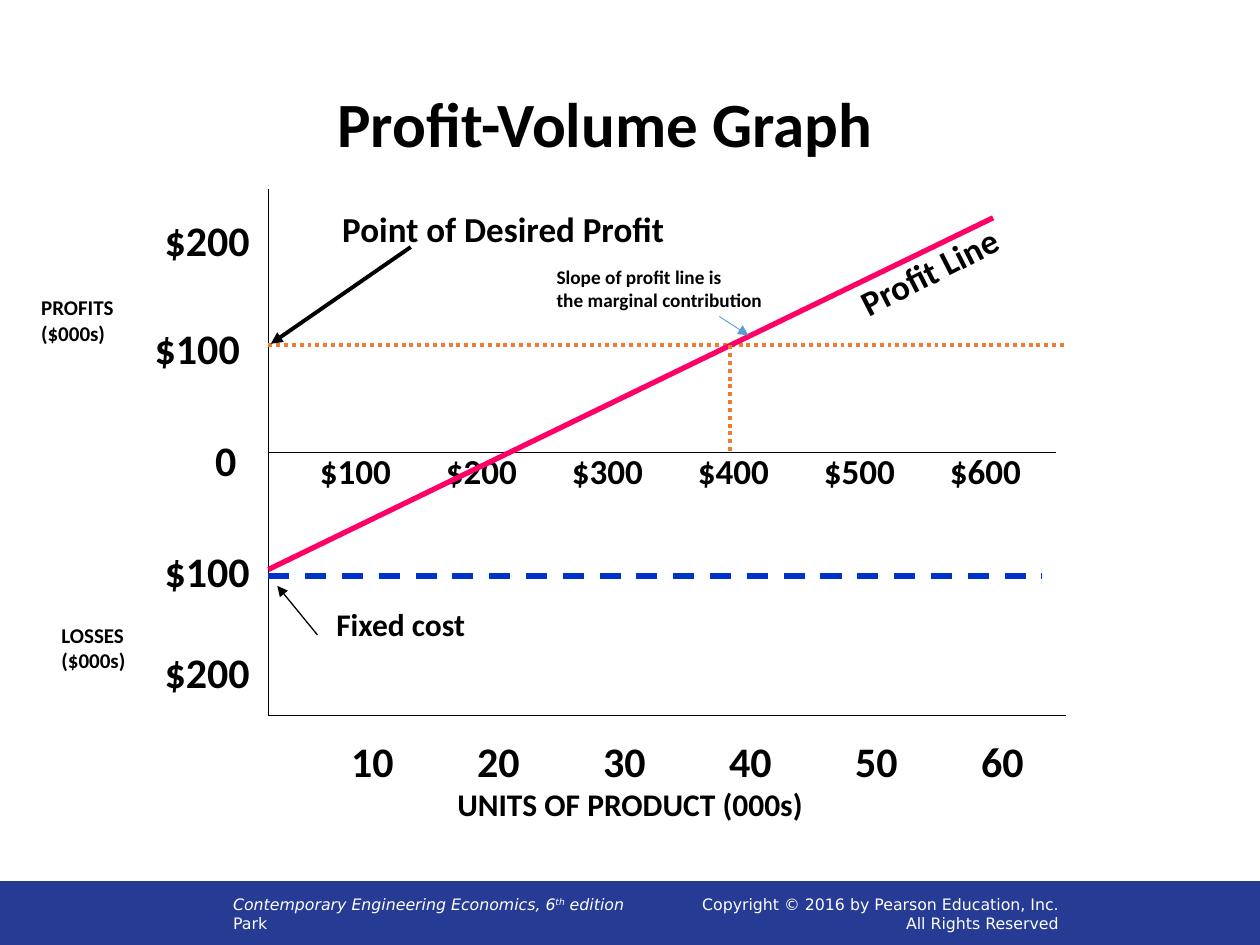
import pptx
import pptx.dml.color
import pptx.enum.dml
import pptx.enum.shapes
import pptx.enum.text
import pptx.oxml.ns
import pptx.util
from lxml import etree

Cm, Pt = pptx.util.Cm, pptx.util.Pt
RGBColor = pptx.dml.color.RGBColor
Align = pptx.enum.text.PP_ALIGN
Anchor = pptx.enum.text.MSO_ANCHOR
AutoSize = pptx.enum.text.MSO_AUTO_SIZE
Dash = pptx.enum.dml.MSO_LINE
qn = pptx.oxml.ns.qn

BLACK = RGBColor(0x00, 0x00, 0x00)
WHITE = RGBColor(0xFF, 0xFF, 0xFF)
NAVY = RGBColor(0x26, 0x3B, 0x94)
ORANGE = RGBColor(0xED, 0x7D, 0x31)
PINK = RGBColor(0xFF, 0x00, 0x66)
BLUE = RGBColor(0x00, 0x33, 0xCC)
SKY = RGBColor(0x5B, 0x9B, 0xD5)

# Graph positions in cm
AXIS_X, RIGHT = 5.41, 21.49
TOP, BOTTOM = 3.81, 14.43
DESIRED_Y, ZERO_Y, FIXED_Y = 6.96, 9.12, 11.61
BREAK_EVEN_X = 14.71


class Painter:
    """Holds the text style and the slide being built."""

    label_style = {"name": "Calibri", "bold": True, "color": BLACK}
    footer_style = {"name": "DejaVu Sans", "size": Pt(9), "color": WHITE}

    def __init__(self, slide):
        self.slide = slide

    def style_span(self, span, style):
        for key, value in style.items():
            if key == "color":
                span.font.color.rgb = value
            elif key == "baseline":
                span.font._element.set("baseline", value)
            else:
                setattr(span.font, key, value)

    def text(self, place, lines, style, frame_format, para_format=None):
        """Each line is a string or a list of (string, extra style) spans."""
        box = self.slide.shapes.add_textbox(*map(Cm, place))
        frame = box.text_frame
        for key, value in frame_format.items():
            setattr(frame, key, value)
        for index, line in enumerate(lines):
            para = frame.paragraphs[0] if index == 0 else frame.add_paragraph()
            for key, value in (para_format or {}).items():
                if key != "space_before" or index:
                    setattr(para, key, value)
            for words, extra in [(line, {})] if isinstance(line, str) else line:
                span = para.add_run()
                span.text = words
                self.style_span(span, {**style, **extra})
        return box

    def label(self, place, lines, size, wrap=False, para_format=None):
        frame_format = {"word_wrap": wrap, "auto_size": AutoSize.SHAPE_TO_FIT_TEXT}
        style = {**self.label_style, "size": Pt(size)}
        return self.text(place, lines, style, frame_format, para_format)

    def scale(self, place, values, size, step=2.54):
        """A row of values set apart by evenly spaced tab stops."""
        box = self.label(place, ["\t".join(values)], size)
        properties = box.text_frame.paragraphs[0]._p.get_or_add_pPr()
        stops = etree.SubElement(properties, qn("a:tabLst"))
        for number in range(1, len(values)):
            etree.SubElement(stops, qn("a:tab"), pos=str(Cm(step * number)), algn="l")

    def block(self, place, lines, style, para_format=None):
        frame_format = {"word_wrap": True, "vertical_anchor": Anchor.MIDDLE}
        return self.text(place, lines, style, frame_format, para_format)

    def bar(self, place, color):
        kind = pptx.enum.shapes.MSO_SHAPE.RECTANGLE
        shape = self.slide.shapes.add_shape(kind, *map(Cm, place))
        shape.shadow.inherit = False
        shape.fill.solid()
        shape.fill.fore_color.rgb = color
        shape.line.color.rgb = color
        shape.line.width = Pt(0.75)

    def line(self, start, end, color=BLACK, width=0.75, dash=None, arrow=False):
        kind = pptx.enum.shapes.MSO_CONNECTOR.STRAIGHT
        line = self.slide.shapes.add_connector(kind, *map(Cm, start + end))
        line.line.color.rgb = color
        line.line.width = Pt(width)
        if dash:
            line.line.dash_style = dash
        if arrow:
            outline = line.line._get_or_add_ln()
            etree.SubElement(outline, qn("a:tailEnd"), type="triangle")
        etree.SubElement(line._element.spPr, qn("a:effectLst"))


def main():
    deck = pptx.Presentation()
    deck.slide_width, deck.slide_height = Cm(25.4), Cm(19.05)
    page = Painter(deck.slides.add_slide(deck.slide_layouts[6]))

    # Footer
    page.bar((0, 17.78, 25.43, 1.27), NAVY)
    book = [
        ("Contemporary Engineering Economics, 6", {"italic": True}),
        ("th", {"italic": True, "baseline": "30000"}),
        (" edition", {"italic": True}),
    ]
    page.block((4.45, 17.78, 15.65, 1.27), [book, "Park"], page.footer_style)
    rights = ["Copyright © 2016 by Pearson Education, Inc.", "All Rights Reserved"]
    page.block((12.5, 17.78, 9.09, 1.27), rights, page.footer_style,
               {"alignment": Align.RIGHT})

    # Title
    page.block((1.4, 1.78, 21.59, 1.55), ["Profit-Volume Graph"],
               {**page.label_style, "size": Pt(36)},
               {"alignment": Align.CENTER, "line_spacing": 0.9})

    # Axes
    page.line((AXIS_X, TOP), (AXIS_X, BOTTOM))
    page.line((AXIS_X, BOTTOM), (RIGHT, BOTTOM))
    page.line((AXIS_X, ZERO_Y), (21.29, ZERO_Y))

    # Axis names and scales
    page.label((0.58, 5.82, 1.98, 1.27), ["PROFITS", "($000s)"], 12)
    page.label((0.99, 12.42, 1.83, 1.27), ["LOSSES", "($000s)"], 12)
    page.label((3.07, 4.19, 2.24, 1.27), ["$200"], 24)
    page.label((2.87, 6.38, 2.24, 1.27), ["$100"], 24)
    page.label((4.09, 8.64, 0.94, 1.27), ["0"], 24)
    page.label((3.07, 10.87, 2.24, 3.33), ["$100", "$200"], 24,
               para_format={"space_before": Pt(29)})
    tens = range(10, 70, 10)
    page.scale((6.83, 14.71, 14.2, 1.27), [str(units) for units in tens], 24)
    page.scale((6.2, 8.94, 14.78, 1.12), [f"${units * 10}" for units in tens], 20)
    page.label((8.97, 15.7, 8.79, 1.02), ["UNITS OF PRODUCT (000s)"], 18, wrap=True)

    # Profit, desired profit and fixed cost lines
    page.line((AXIS_X, DESIRED_Y), (RIGHT, DESIRED_Y), ORANGE, 2.25, Dash.ROUND_DOT)
    page.line((AXIS_X, 11.48), (20.02, 4.39), PINK, 3)
    page.line((BREAK_EVEN_X, DESIRED_Y), (BREAK_EVEN_X, ZERO_Y), ORANGE, 2.25,
              Dash.ROUND_DOT)
    page.line((AXIS_X, FIXED_Y), (21.01, FIXED_Y), BLUE, 3, Dash.DASH)

    # Notes on the lines
    page.label((6.65, 4.06, 7.06, 1.12), ["Point of Desired Profit"], 20)
    page.line((8.28, 4.98), (5.46, 6.93), width=2.25, arrow=True)
    page.label((16.97, 4.9, 3.58, 1.09), ["Profit Line"], 20).rotation = 333
    slope = ["Slope of profit line is", "the marginal contribution"]
    page.label((10.97, 5.23, 4.7, 1.19), slope, 11)
    page.line((14.5, 6.38), (15.09, 6.76), SKY, 0.5, arrow=True)
    page.label((6.53, 12.07, 3.12, 1.02), ["Fixed cost"], 18)
    page.line((6.4, 12.8), (5.59, 11.81), arrow=True)

    deck.save("out.pptx")


if __name__ == "__main__":
    main()
